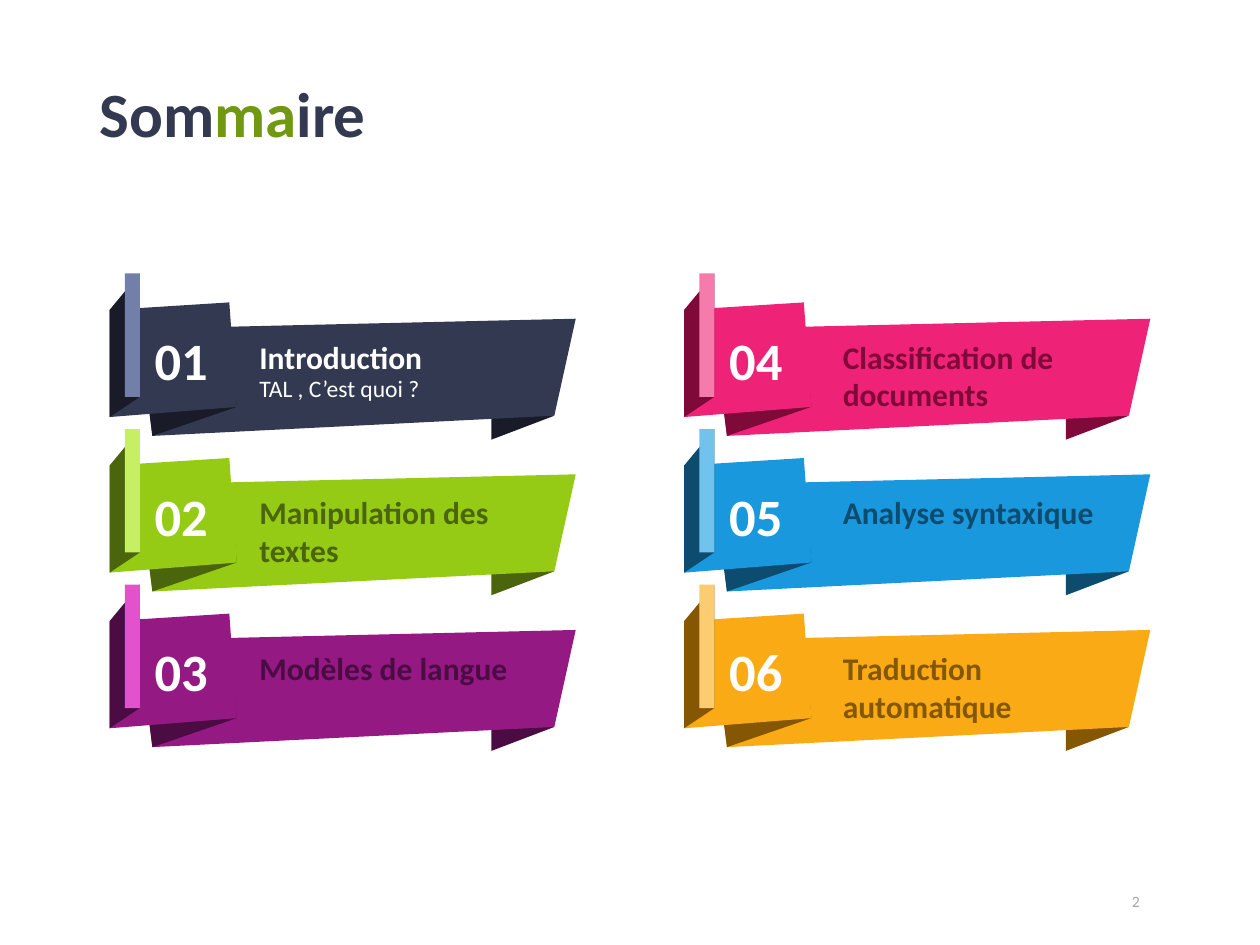
import pptx
import pptx.dml.color
import pptx.enum.shapes
import pptx.enum.text
import pptx.oxml
import pptx.util
from pptx.util import Inches

ALIGN = pptx.enum.text.PP_ALIGN
ANCHOR = pptx.enum.text.MSO_ANCHOR

THEME = {
    "font": "Calibri",
    "ink": "323951", "accent": "709810", "muted": "A6A6A6", "white": "FFFFFF",
    "title": 36, "number": 30, "heading": 18, "detail": 13.5, "footer": 9,
}

PAGE = 2
TITLE = [("Som", "ink"), ("ma", "accent"), ("ire", "ink")]

# heading, detail, main colour, fold colour, bar colour, heading colour
SECTIONS = [
    ("Introduction", "TAL , C’est quoi ?", "323951", "191C28", "727FA8", "FFFFFF"),
    ("Manipulation des textes", "", "95CA15", "4A650B", "C6EF63", "4A650B"),
    ("Modèles de langue", "", "951983", "4A0C42", "E252CD", "4A0C42"),
    ("Classification de documents", "", "EE2377", "7F0A3A", "F57BAD", "7F0A3A"),
    ("Analyse syntaxique", "", "1A98DD", "0D4C6E", "72C2EE", "0D4C6E"),
    ("Traduction automatique", "", "FAAA15", "855703", "FCCC73", "855703"),
]

ROWS = 3
COLUMN_LEFTS = (0.87, 5.43)
TEXT_LEFTS = (1.96, 6.59)
FIRST_TOP, LAST_TOP = 2.17, 4.64
ROW_PITCH = (LAST_TOP - FIRST_TOP) / (ROWS - 1)

# Ribbon outlines in inches from the ribbon's top left corner
TAIL = [(3.53, 1.13), (3.03, 1.32), (3.03, 1.09)]
BANNER = [(3.53, 1.13), (0.34, 1.29), (0.24, 0.44), (3.70, 0.36)]
UNDERFOLD = [(0.34, 1.29), (1.01, 1.06), (0.95, 0.43), (0.28, 0.83)]
NUMBER_FLAP = [(1.01, 1.06), (0.95, 0.23), (0, 0.29), (0, 1.14)]
SIDE = [(0, 0.29), (0.24, 0), (0.24, 0.98), (0, 1.14)]


def rgb(value):
    return pptx.dml.color.RGBColor.from_string(value)


def style(font, size, color, bold=False):
    font.name = THEME["font"]
    font.size = pptx.util.Pt(THEME[size])
    font.bold = bold
    font.color.rgb = rgb(color)


def set_insets(tf, left, top, right, bottom):
    tf.margin_left, tf.margin_top = Inches(left), Inches(top)
    tf.margin_right, tf.margin_bottom = Inches(right), Inches(bottom)


def paint(sp, color):
    """Give a shape a plain fill without outline or shadow."""
    sp.fill.solid()
    sp.fill.fore_color.rgb = rgb(color)
    sp.line.fill.background()
    sp.shadow.inherit = False


def add_outline(s, points, left, top, color):
    corners = [(Inches(left + x), Inches(top + y)) for x, y in points]
    builder = s.shapes.build_freeform(*corners[0])
    builder.add_line_segments(corners[1:], close=True)
    sp = builder.convert_to_shape()
    paint(sp, color)
    return sp


def add_text(s, text, left, top, height, size, color, bold=False, inset_top=0):
    sp = s.shapes.add_textbox(Inches(left), Inches(top), Inches(2.45), Inches(height))
    tf = sp.text_frame
    tf.word_wrap = True
    set_insets(tf, 0.1, inset_top, 0.1, 0)
    p = tf.paragraphs[0]
    p.text = text
    style(p.font, size, color, bold)


def add_ribbon(s, number, left, top, main, fold, bar):
    add_outline(s, TAIL, left, top, fold)
    add_outline(s, BANNER, left, top, main)
    add_outline(s, UNDERFOLD, left, top, fold)
    flap = add_outline(s, NUMBER_FLAP, left, top, main)
    add_outline(s, SIDE, left, top, fold)
    strip = s.shapes.add_shape(
        pptx.enum.shapes.MSO_SHAPE.RECTANGLE,
        Inches(left + 0.12), Inches(top), Inches(0.12), Inches(0.98))
    paint(strip, bar)

    tf = flap.text_frame
    tf.vertical_anchor = ANCHOR.MIDDLE
    set_insets(tf, 0.07, 0.04, 0.23, 0.04)
    p = tf.paragraphs[0]
    p.text = f"{number:02d}"
    p.alignment = ALIGN.RIGHT
    style(p.font, "number", THEME["white"], bold=True)


def add_title(s):
    sp = s.shapes.title
    sp.left, sp.top, sp.width, sp.height = map(Inches, (0.69, 0.31, 8.62, 1.24))
    tf = sp.text_frame
    tf.vertical_anchor = ANCHOR.MIDDLE
    p = tf.paragraphs[0]
    p.alignment = ALIGN.LEFT
    p.line_spacing = 0.9
    for text, color in TITLE:
        r = p.add_run()
        r.text = text
        style(r.font, "title", THEME[color], bold=True)


def add_page_number(s):
    sp = s.shapes.add_textbox(*map(Inches, (8.72, 6.95, 0.59, 0.4)))
    tf = sp.text_frame
    tf.word_wrap = True
    tf.vertical_anchor = ANCHOR.MIDDLE
    p = tf.paragraphs[0]
    p.alignment = ALIGN.CENTER
    r = p.add_run()
    r.text = str(PAGE)
    style(r.font, "footer", THEME["muted"])
    field = pptx.oxml.parse_xml(
        '<a:fld xmlns:a="http://schemas.openxmlformats.org/drawingml/2006/main"'
        ' id="{B6F15528-21DE-4FAA-801E-634DDDAF4B2B}" type="slidenum"/>')
    run = p.runs[0]._r
    run.addprevious(field)
    field.extend(list(run))
    run.getparent().remove(run)


def main():
    prs = pptx.Presentation()
    prs.slide_width, prs.slide_height = Inches(10), Inches(7.5)
    prs.element.set("firstSlideNum", str(PAGE))
    s = prs.slides.add_slide(prs.slide_layouts.get_by_name("Title Only"))
    add_title(s)
    add_page_number(s)

    for i, (heading, detail, main_color, fold, bar, text_color) in enumerate(SECTIONS):
        column, row = divmod(i, ROWS)
        top = FIRST_TOP + row * ROW_PITCH
        add_ribbon(s, i + 1, COLUMN_LEFTS[column], top, main_color, fold, bar)
        text_left = TEXT_LEFTS[column]
        lines = 2 if len(heading) > 20 else 1
        add_text(s, heading, text_left, top + 0.36, 0.15 + 0.3 * lines,
                 "heading", text_color, bold=True, inset_top=0.15)
        if detail:
            add_text(s, detail, text_left, top + 0.8, 0.23, "detail", text_color)

    prs.save("out.pptx")


if __name__ == "__main__":
    main()
